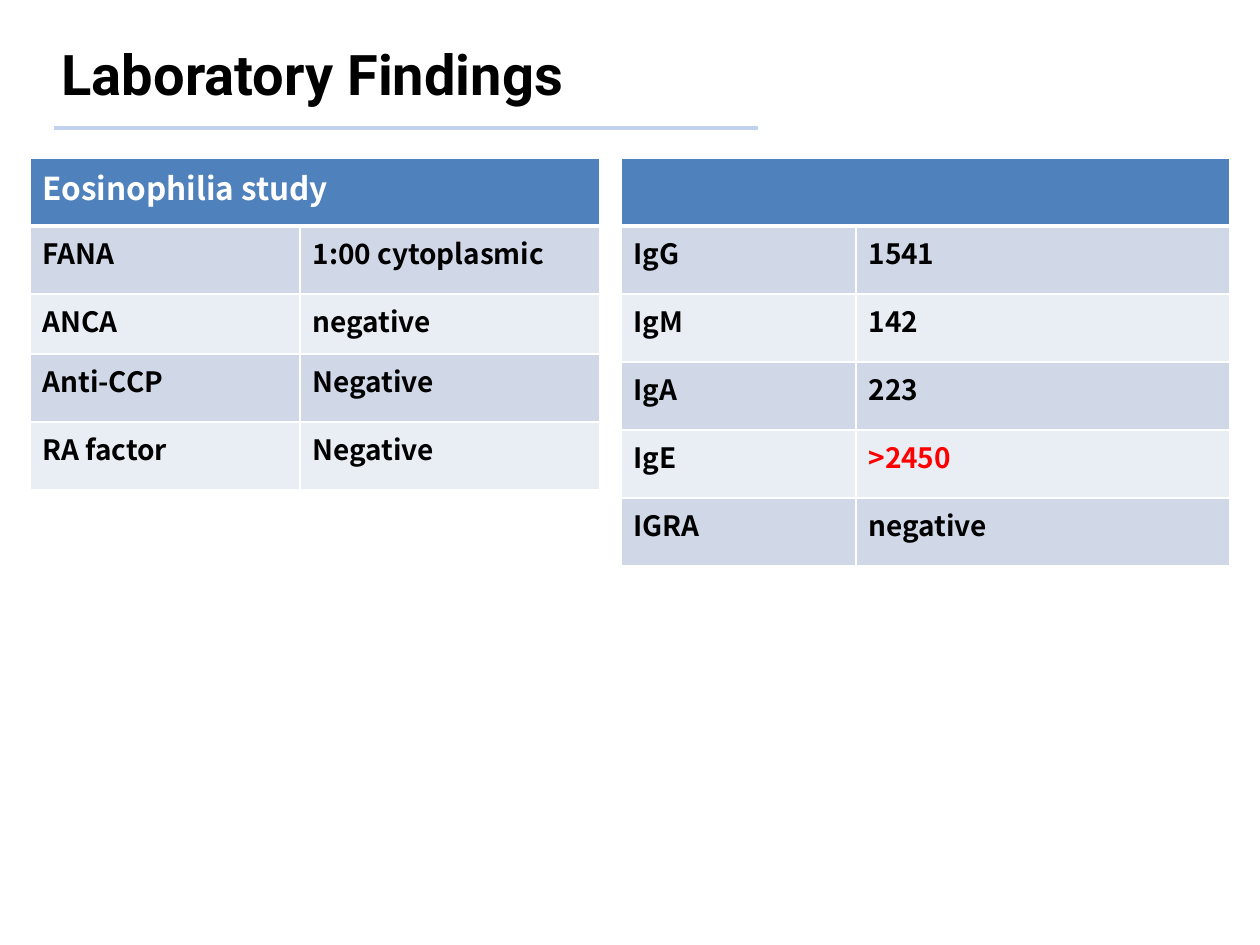
from lxml import etree
from pptx import Presentation
from pptx.dml.color import RGBColor
from pptx.enum.shapes import MSO_CONNECTOR
from pptx.enum.text import MSO_ANCHOR, MSO_AUTO_SIZE, PP_ALIGN
from pptx.oxml.ns import qn
from pptx.util import Pt

PX = 914400 / 126  # EMU in one px
LINE = MSO_CONNECTOR.STRAIGHT
MIDDLE, LEFT = MSO_ANCHOR.MIDDLE, PP_ALIGN.LEFT
NO_FIT = MSO_AUTO_SIZE.NONE

BLACK = RGBColor(0x00, 0x00, 0x00)
WHITE = RGBColor(0xFF, 0xFF, 0xFF)
RED = RGBColor(0xFF, 0x00, 0x00)
RULE = RGBColor(0xC2, 0xD1, 0xED)
HEAD = RGBColor(0x4F, 0x81, 0xBD)
BANDS = (RGBColor(0xD0, 0xD8, 0xE8), RGBColor(0xE9, 0xED, 0xF4))

TITLE_FONT = "Roboto"
TABLE_FONT = "Noto Sans CJK KR"

STUDY = [("FANA", "1:00 cytoplasmic"), ("ANCA", "negative"),
         ("Anti-CCP", "Negative"), ("RA factor", "Negative")]
SERUM = [("IgG", "1541"), ("IgM", "142"), ("IgA", "223"),
         ("IgE", ">2450"), ("IGRA", "negative")]
MARKED = {">2450"}


def emu(*sizes):
    return [round(size * PX) for size in sizes]


def add_run(para, text, font, size, color):
    run = para.add_run()
    run.text = text
    run.font.name = font
    run.font.size = Pt(size)
    run.font.bold = True
    run.font.color.rgb = color


def add_title(slide, box, text):
    x, y, w, h = box
    # Rule under the title
    rule = slide.shapes.add_connector(
        LINE, *emu(x + 5, y + 99, x + 709, y + 99))
    rule.line.color.rgb = RULE
    rule.line.width = Pt(2.25)
    etree.SubElement(rule._element.spPr, qn("a:effectLst"))
    # Title text
    title = slide.shapes.title
    title.left, title.top, title.width, title.height = emu(x, y, w, h)
    frame = title.text_frame
    frame.auto_size = NO_FIT
    frame.vertical_anchor = MIDDLE
    para = frame.paragraphs[0]
    para.alignment = LEFT
    add_run(para, text, TITLE_FONT, 32, BLACK)


def set_cell(cell, fill, top=1, bottom=1):
    props = cell._tc.get_or_add_tcPr()
    for side, width in zip("LRTB", (1, 1, top, bottom)):
        edge = etree.SubElement(props, qn(f"a:ln{side}"), w=str(Pt(width)))
        paint = etree.SubElement(edge, qn("a:solidFill"))
        etree.SubElement(paint, qn("a:srgbClr"), val=str(WHITE))
    cell.fill.solid()
    cell.fill.fore_color.rgb = fill


def add_table(slide, box, head, rows, cols, heights):
    frame = slide.shapes.add_table(len(rows) + 1, len(cols), *emu(*box))
    table = frame.table
    for col, width in zip(table.columns, emu(*cols)):
        col.width = width
    for row, height in zip(table.rows, emu(*heights)):
        row.height = height
    # Header across all columns
    for cell in table.rows[0].cells:
        set_cell(cell, HEAD, bottom=3)
    first = table.cell(0, 0)
    first.merge(table.cell(0, len(cols) - 1))
    if head:
        add_run(first.text_frame.paragraphs[0], head, TABLE_FONT, 18, WHITE)
    # Banded body
    for r, row in enumerate(rows, 1):
        for c, text in enumerate(row):
            cell = table.cell(r, c)
            set_cell(cell, BANDS[(r - 1) % 2], top=3 if r == 1 else 1)
            color = RED if text in MARKED else BLACK
            add_run(cell.text_frame.paragraphs[0], text, TABLE_FONT, 16, color)


def main():
    deck = Presentation()
    deck.slide_width, deck.slide_height = emu(1260, 945)
    slide = deck.slides.add_slide(deck.slide_layouts[5])
    add_title(slide, (49, 29, 718, 88), "Laboratory Findings")
    add_table(slide, (30, 158, 570, 331), "Eosinophilia study", STUDY,
              (270, 300), (68, 68, 60, 68, 68))
    add_table(slide, (621, 158, 609, 408), "", SERUM, (235, 374), [68] * 6)
    deck.save("out.pptx")


if __name__ == "__main__":
    main()
